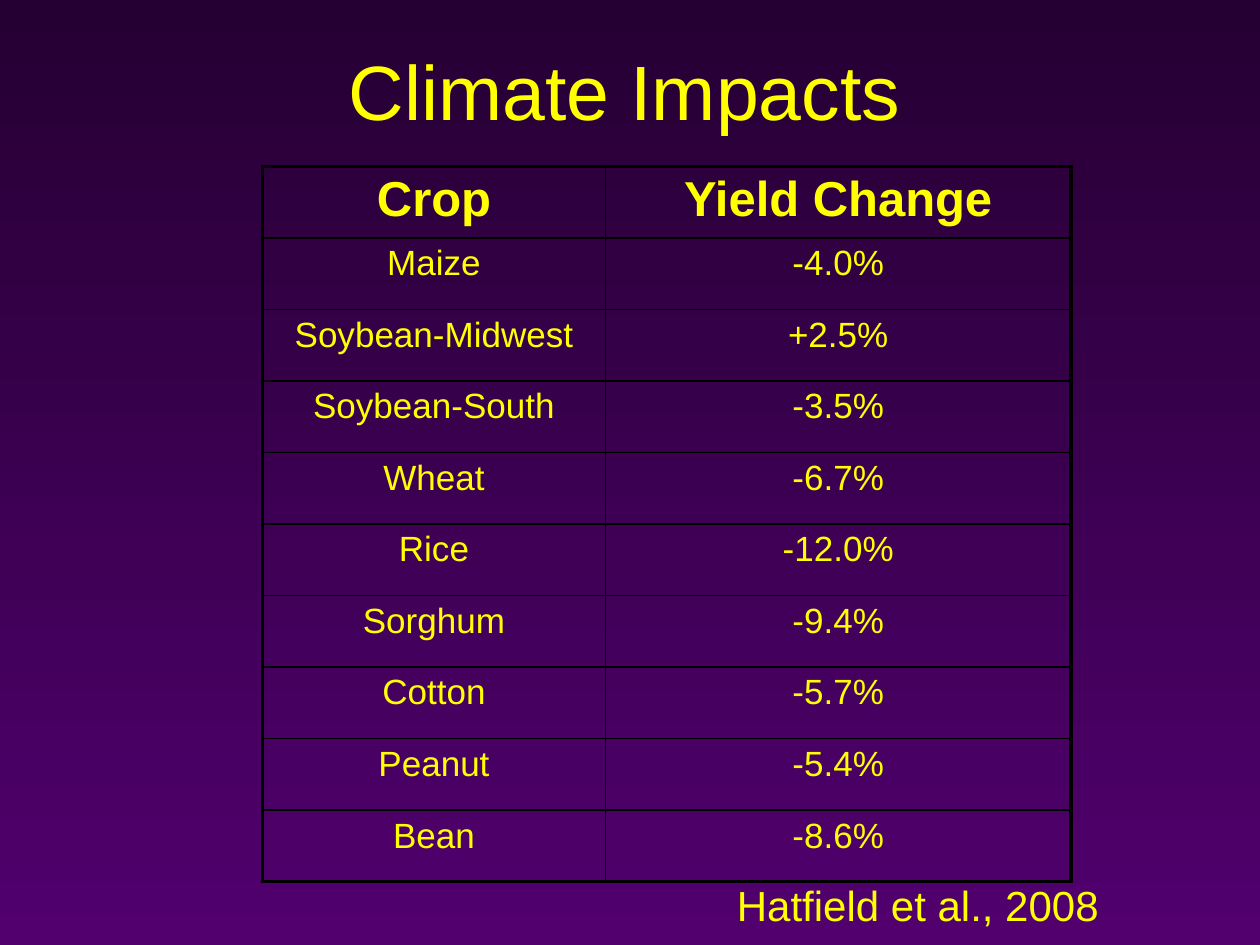
from lxml.etree import SubElement
from pptx import Presentation
from pptx.dml.color import RGBColor
from pptx.enum.text import MSO_ANCHOR, PP_ALIGN
from pptx.oxml.ns import qn
from pptx.util import Pt

TITLE = "Climate Impacts"
CITATION = "Hatfield et al., 2008"
YIELD_CHANGES = [
    ("Crop", "Yield Change"),
    ("Maize", "-4.0%"),
    ("Soybean-Midwest", "+2.5%"),
    ("Soybean-South", "-3.5%"),
    ("Wheat", "-6.7%"),
    ("Rice", "-12.0%"),
    ("Sorghum", "-9.4%"),
    ("Cotton", "-5.7%"),
    ("Peanut", "-5.4%"),
    ("Bean", "-8.6%"),
]

THEME = {
    "background": ("250033", "51006E"),
    "border": "000000",
    "outer_line": 2.25,
    "inner_line": 1,
    "title": {"size": Pt(44), "bold": False},
    "header": {"size": Pt(28), "bold": True},
    "body": {"size": Pt(20), "bold": False},
    "citation": {"size": Pt(24), "bold": False},
    "common": {"name": "Arial"},
    "text": RGBColor.from_string("FFFF00"),
}

SLIDE_SIZE = (720, 540)
TITLE_BOX = (90, 6, 534, 90)
CITATION_BOX = (414, 499, 223, 36)
TABLE_LEFT, TABLE_TOP = 150, 95
COLUMN_WIDTHS = (196, 266)
ROW_HEIGHT = 40.9


def write(frame, text, style, alignment):
    paragraph = frame.paragraphs[0]
    paragraph.alignment = alignment
    span = paragraph.add_run()
    span.text = text
    for name, value in {**THEME["common"], **THEME[style]}.items():
        setattr(span.font, name, value)
    span.font.color.rgb = THEME["text"]


def add_text(page, position, text, style, alignment, **frame_format):
    box = page.shapes.add_textbox(*map(Pt, position))
    for name, value in frame_format.items():
        setattr(box.text_frame, name, value)
    write(box.text_frame, text, style, alignment)


def set_borders(cell, outer_sides):
    """Draw all four cell edges, heavier where the edge is on the table's rim."""
    properties = cell._tc.get_or_add_tcPr()
    for index, (side, is_outer) in enumerate(outer_sides.items()):
        width = THEME["outer_line"] if is_outer else THEME["inner_line"]
        line = properties.makeelement(qn(f"a:ln{side}"), {"w": str(Pt(width))})
        fill = SubElement(line, qn("a:solidFill"))
        SubElement(fill, qn("a:srgbClr"), val=THEME["border"])
        properties.insert(index, line)


def add_yield_table(page):
    last_row, last_column = len(YIELD_CHANGES) - 1, len(COLUMN_WIDTHS) - 1
    size = (sum(COLUMN_WIDTHS), ROW_HEIGHT * len(YIELD_CHANGES))
    table = page.shapes.add_table(
        len(YIELD_CHANGES), len(COLUMN_WIDTHS),
        *map(Pt, (TABLE_LEFT, TABLE_TOP, *size)),
    ).table
    table.first_row = table.horz_banding = False
    for column, width in zip(table.columns, COLUMN_WIDTHS):
        column.width = Pt(width)
    for r, values in enumerate(YIELD_CHANGES):
        table.rows[r].height = Pt(ROW_HEIGHT)
        for c, text in enumerate(values):
            cell = table.cell(r, c)
            cell.fill.background()
            style = "header" if r == 0 else "body"
            write(cell.text_frame, text, style, PP_ALIGN.CENTER)
            set_borders(cell, {"L": c == 0, "R": c == last_column,
                               "T": r == 0, "B": r == last_row})


def paint_background(page):
    fill = page.background.fill
    fill.gradient()
    fill.gradient_angle = 270
    for stop, color, position in zip(fill.gradient_stops, THEME["background"], (0, 1)):
        stop.color.rgb = RGBColor.from_string(color)
        stop.position = position


def main():
    deck = Presentation()
    deck.slide_width, deck.slide_height = map(Pt, SLIDE_SIZE)
    page = deck.slides.add_slide(deck.slide_layouts[6])
    paint_background(page)
    add_text(page, TITLE_BOX, TITLE, "title", PP_ALIGN.CENTER,
             word_wrap=True, vertical_anchor=MSO_ANCHOR.MIDDLE)
    add_yield_table(page)
    add_text(page, CITATION_BOX, CITATION, "citation", PP_ALIGN.LEFT, word_wrap=False)
    deck.save("out.pptx")


if __name__ == "__main__":
    main()
